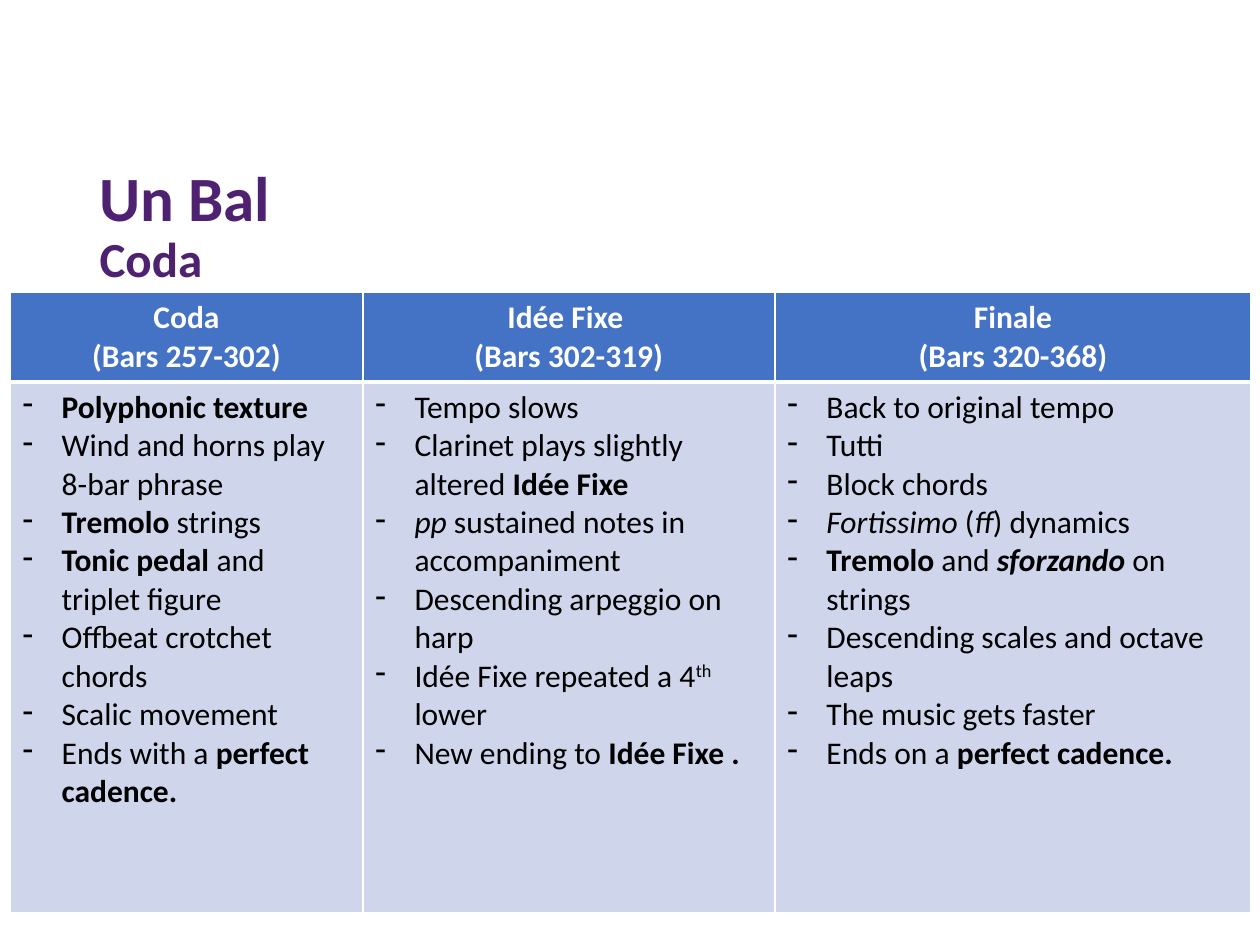
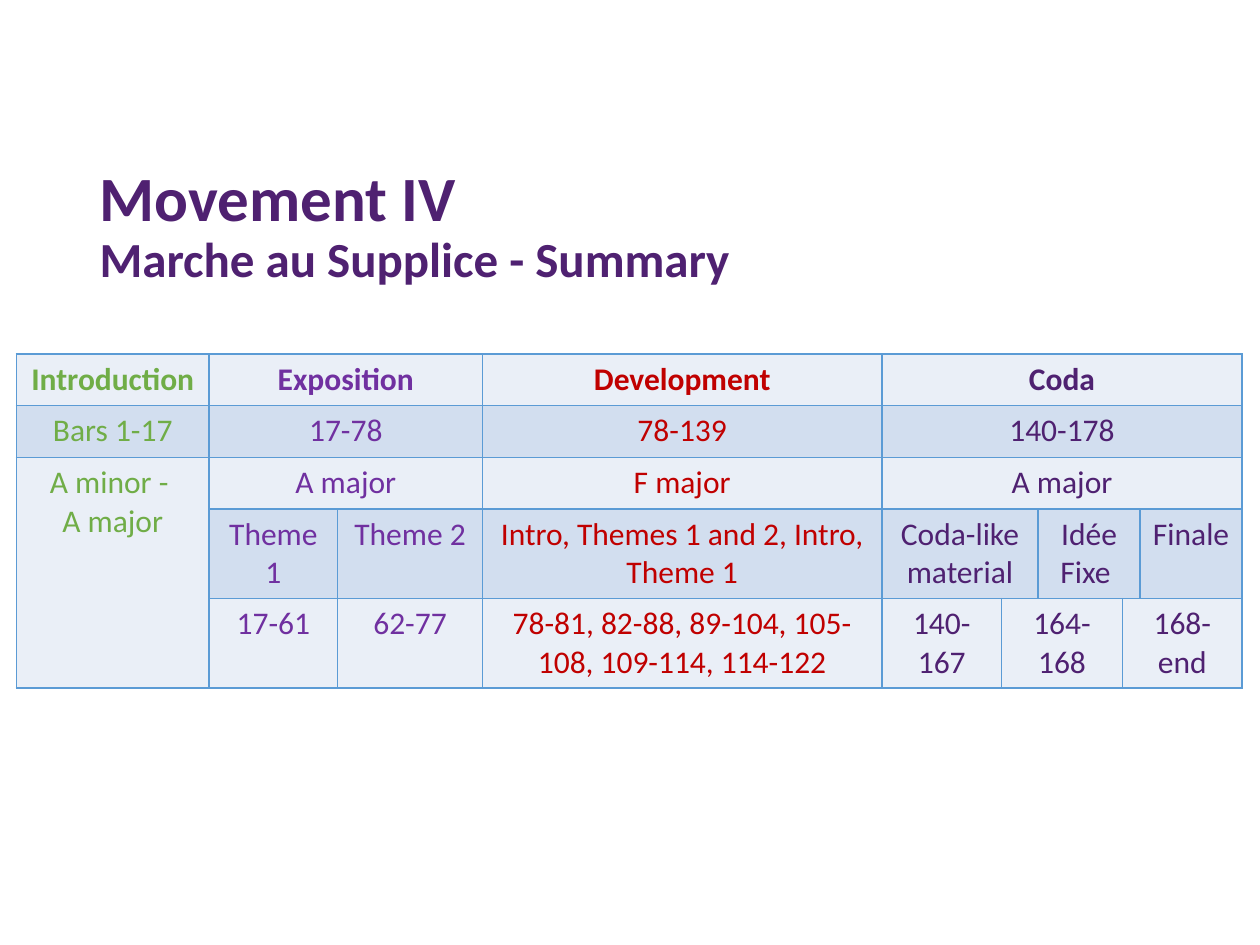
from lxml import etree
from pptx import Presentation
from pptx.dml.color import RGBColor
from pptx.enum.text import MSO_ANCHOR, PP_ALIGN
from pptx.oxml.ns import qn
from pptx.util import Inches, Pt

LEFT, MID = PP_ALIGN.LEFT, PP_ALIGN.CENTER
CENTER = MSO_ANCHOR.MIDDLE
FACE = "Calibri"
PLUM, WHITE, BLACK = "4F2171", "FFFFFF", "000000"
GREEN, VIOLET, RED = "70AD47", "7030A0", "C00000"
TITLES = [("Un Bal", "Coda"), ("Movement IV", "Marche au Supplice - Summary")]


def write(par, text, hue, size=18, style=""):
    run = par.add_run()
    run.text = text
    font = run.font
    font.name = FACE
    font.size = Pt(size)
    font.bold = "b" in style
    font.italic = "i" in style
    font.color.rgb = RGBColor.from_string(hue)
    if "s" in style:
        run._r.get_or_add_rPr().set("baseline", "30000")


def paint(cell, fill, edge, top=1, base=1):
    props = cell._tc.get_or_add_tcPr()
    for side, width in zip("LRTB", (1, 1, top, base)):
        line = etree.SubElement(props, qn(f"a:ln{side}"), w=str(Pt(width)))
        solid = etree.SubElement(line, qn("a:solidFill"))
        etree.SubElement(solid, qn("a:srgbClr"), val=edge)
    cell.fill.solid()
    cell.fill.fore_color.rgb = RGBColor.from_string(fill)


deck = Presentation()
deck.slide_width, deck.slide_height = Inches(10), Inches(7.5)

slides = []
for head, sub in TITLES:
    slide = deck.slides.add_slide(deck.slide_layouts[5])
    title = slide.shapes.title
    title.left, title.top = Inches(0.69), Inches(1.08)
    title.width, title.height = Inches(8.62), Inches(1.45)
    title.text_frame.word_wrap = True
    title.text_frame.vertical_anchor = CENTER
    par = title.text_frame.paragraphs[0]
    par.alignment = LEFT
    par.line_spacing = 0.9
    write(par, head, PLUM, 36, "b")
    par.add_line_break()
    write(par, sub, PLUM, 28, "b")
    slides.append(slide)

PARTS = [
    (2.8, "Coda", "(Bars 257-302)", [
        [("Polyphonic texture", "b")],
        [("Wind and horns play 8-bar phrase", "")],
        [("Tremolo", "b"), (" strings", "")],
        [("Tonic pedal ", "b"), ("and triplet figure", "")],
        [("Offbeat crotchet chords", "")],
        [("Scalic movement", "")],
        [("Ends with a ", ""), ("perfect cadence.", "b")],
    ]),
    (3.27, "Idée Fixe ", "(Bars 302-319)", [
        [("Tempo slows", "")],
        [("Clarinet plays slightly altered ", ""), ("Idée Fixe", "b")],
        [("pp", "i"), (" sustained notes in accompaniment", "")],
        [("Descending arpeggio on harp", "")],
        [("Idée Fixe repeated a 4", ""), ("th", "s"), (" lower", "")],
        [("New ending to ", ""), ("Idée Fixe .", "b")],
    ]),
    (3.78, "Finale", "(Bars 320-368)", [
        [("Back to original tempo", "")],
        [("Tutti", "")],
        [("Block chords", "")],
        [("Fortissimo", "i"), (" (", ""), ("ff", "i"), (") dynamics", "")],
        [("Tremolo", "b"), (" and ", ""), ("sforzando", "bi"),
         (" on strings", "")],
        [("Descending scales and octave leaps", "")],
        [("The music gets faster", "")],
        [("Ends on a ", ""), ("perfect cadence.", "b")],
    ]),
]
grid = slides[0].shapes.add_table(
    2, 3, Inches(0.08), Inches(2.32), Inches(9.85), Inches(4.9)).table
grid.first_row = grid.horz_banding = False
grid.rows[0].height, grid.rows[1].height = Inches(0.69), Inches(4.21)
for col, (width, name, bars, points) in enumerate(PARTS):
    grid.columns[col].width = Inches(width)
    top, body = grid.cell(0, col), grid.cell(1, col)
    paint(top, "4472C4", WHITE, base=3)
    paint(body, "CFD5EA", WHITE, top=3)
    for i, text in enumerate((name, bars)):
        frame = top.text_frame
        par = frame.add_paragraph() if i else frame.paragraphs[0]
        par.alignment = MID
        write(par, text, WHITE, style="b")
    for i, point in enumerate(points):
        frame = body.text_frame
        par = frame.add_paragraph() if i else frame.paragraphs[0]
        props = par._p.get_or_add_pPr()
        props.set("marL", str(Inches(0.31)))
        props.set("indent", str(-Inches(0.31)))
        etree.SubElement(props, qn("a:buChar"), char="-")
        for text, style in point:
            write(par, text, BLACK, style=style)

WIDTHS = [1.53, 1.02, 1.15, 3.17, 0.95, 0.29, 0.67, 0.14, 0.81]
HEIGHTS = [0.41, 0.41, 0.41, 0.71, 0.71]
HUES = [GREEN, VIOLET, VIOLET, RED] + [PLUM] * 5
BANDS = ["EAEFF7", "D2DEEF"]
WIDE = [(0, 1), (1, 2), (3, 1), (4, 5)]
ROWS = [
    (WIDE, ["Introduction", "Exposition", "Development", "Coda"]),
    (WIDE, ["Bars 1-17", "17-78", "78-139", "140-178"]),
    (WIDE, ["A minor - \nA major", "A major", "F major", "A major"]),
    ([(1, 1), (2, 1), (3, 1), (4, 2), (6, 2), (8, 1)],
     ["Theme 1", "Theme 2", "Intro, Themes 1 and 2, Intro, Theme 1",
      "Coda-like material", "Idée Fixe ", "Finale"]),
    ([(1, 1), (2, 1), (3, 1), (4, 1), (5, 2), (7, 2)],
     ["17-61", "62-77", "78-81, 82-88, 89-104, 105-108, 109-114, 114-122",
      "140-167", "164-168", "168-end"]),
]
grid = slides[1].shapes.add_table(
    len(HEIGHTS), len(WIDTHS), Inches(0.13), Inches(2.81),
    Inches(sum(WIDTHS)), Inches(sum(HEIGHTS))).table
grid.first_row = grid.horz_banding = False
for col, width in enumerate(WIDTHS):
    grid.columns[col].width = Inches(width)
for row, (spans, texts) in enumerate(ROWS):
    grid.rows[row].height = Inches(HEIGHTS[row])
    for col in range(len(WIDTHS)):
        paint(grid.cell(row, col), BANDS[row % 2 if col else 0]
              if row > 1 else BANDS[row], "5B9BD5")
    for (col, span), text in zip(spans, texts):
        cell = grid.cell(row, col)
        if span > 1:
            cell.merge(grid.cell(row, col + span - 1))
        for i, line in enumerate(text.split("\n")):
            frame = cell.text_frame
            par = frame.add_paragraph() if i else frame.paragraphs[0]
            par.alignment = MID
            write(par, line, HUES[col], style="" if row else "b")
grid.cell(2, 0).merge(grid.cell(4, 0))

deck.save("out.pptx")
